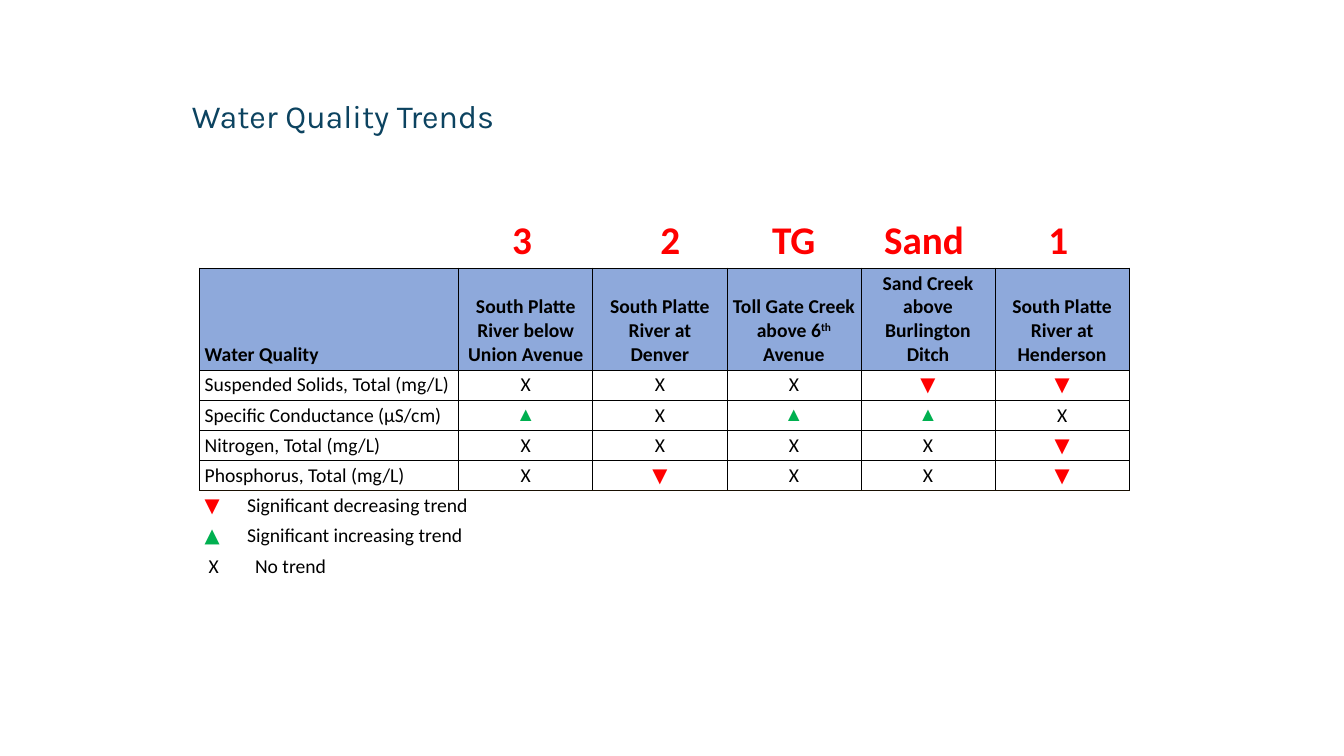
"""Build the Water Quality Trends slide: a trend table with site labels above it."""
from lxml import etree
from pptx import Presentation
from pptx.dml.color import RGBColor
from pptx.enum import text
from pptx.oxml import ns
from pptx.util import Inches, Pt

TITLE = "Water Quality Trends"
HEADERS = ["Water Quality", "South Platte River below Union Avenue",
           "South Platte River at Denver", "Toll Gate Creek above 6^th^ Avenue",
           "Sand Creek above Burlington Ditch", "South Platte River at Henderson"]
TRENDS = [("Suspended Solids, Total (mg/L)", "XXX▼▼"),
          ("Specific Conductance (µS/cm)", "▲X▲▲X"),
          ("Nitrogen, Total (mg/L)", "XXXX▼"),
          ("Phosphorus, Total (mg/L)", "X▼XX▼")]
LEGEND = [("▼", "Significant decreasing trend", 0),
          ("▲", "Significant increasing trend", 0),
          ("X", "No trend", 0.04)]
SITES = [("3", 4.98, 0.51), ("2", 6.45, 0.51), ("TG", 7.56, 1.33),
         ("Sand", 8.67, 1.33), ("1", 10.3, 0.51)]

BLACK, RED, GREEN = "000000", "FF0000", "00B050"
NAVY, HEADER_FILL, BASE_LINE = "0C4360", "8EA9DB", "191002"
MARK_COLORS = {"X": BLACK, "▼": RED, "▲": GREEN}
COL_WIDTHS = [2.57] + [1.33] * 5
HEADER_H, ROW_H = 1.01, 0.3
LEGEND_TAB = 0.42


def rgb(value):
    """Turn a hex string into a colour."""
    return RGBColor.from_string(value)


def write(p, words, size=14, font="Calibri", color=BLACK, bold=False, align=None):
    """Add words to a paragraph; parts between carets are superscript."""
    if align is not None:
        p.alignment = align
    for i, part in enumerate(words.split("^")):
        r = p.add_run()
        r.text = part
        r.font.size, r.font.name, r.font.bold = Pt(size), font, bold
        r.font.color.rgb = rgb(color)
        if i % 2:
            r._r.get_or_add_rPr().set("baseline", "30000")


def set_borders(cell, **sides):
    """Draw the L, R, T and B borders of a cell from (colour, width) pairs."""
    tcPr = cell._tc.get_or_add_tcPr()
    for side in "LRTB":
        color, width = sides.get(side, (None, 0))
        ln = etree.SubElement(tcPr, ns.qn(f"a:ln{side}"), w=str(Pt(width)))
        if color:
            fill = etree.SubElement(ln, ns.qn("a:solidFill"))
            etree.SubElement(fill, ns.qn("a:srgbClr"), val=color)
        else:
            etree.SubElement(ln, ns.qn("a:noFill"))


def format_cell(cell, anchor, fill=None, **sides):
    """Set the margins, anchor, borders and fill of a cell."""
    cell.margin_left = cell.margin_right = Inches(0.05)
    cell.margin_top = cell.margin_bottom = Inches(0.03)
    cell.vertical_anchor = anchor
    set_borders(cell, **sides)
    if fill:
        cell.fill.solid()
        cell.fill.fore_color.rgb = rgb(fill)
    else:
        cell.fill.background()


def add_title(s):
    """Place and fill the title."""
    sp = s.shapes.title
    sp.left, sp.top, sp.width, sp.height = map(Inches, (1.44, 0.95, 3.93, 1.08))
    tf = sp.text_frame
    tf.auto_size = text.MSO_AUTO_SIZE.NONE
    tf.vertical_anchor = text.MSO_ANCHOR.TOP
    p = tf.paragraphs[0]
    p.line_spacing = 0.9
    write(p, TITLE, size=23, font="Karla", color=NAVY, align=text.PP_ALIGN.CENTER)


def add_trend_table(s):
    """Add the table of trends with its legend rows."""
    grid = [HEADERS] + [[name, *marks] for name, marks in TRENDS]
    last_row, last_col = len(grid) - 1, len(HEADERS) - 1
    heights = [HEADER_H] + [ROW_H] * (last_row + len(LEGEND))
    table = s.shapes.add_table(len(heights), len(HEADERS), Inches(1.98), Inches(2.66),
                               Inches(sum(COL_WIDTHS)), Inches(sum(heights))).table
    table.first_row = table.horz_banding = False
    for col, width in zip(table.columns, COL_WIDTHS):
        col.width = Inches(width)
    for row, height in zip(table.rows, heights):
        row.height = Inches(height)

    thin, thick, base = (BLACK, 0.5), (BLACK, 1), (BASE_LINE, 1)
    for i, row in enumerate(grid):
        for j, words in enumerate(row):
            cell = table.cell(i, j)
            low = i == 0 or j == 0
            format_cell(cell, text.MSO_ANCHOR.BOTTOM if low else text.MSO_ANCHOR.MIDDLE,
                        fill=None if i else HEADER_FILL,
                        L=thin if j else thick,
                        R=thick if j == last_col and i != 0 else thin,
                        T=thin if i else thick,
                        B=base if i == last_row else thin)
            write(cell.text_frame.paragraphs[0], words, bold=i == 0,
                  font="Times New Roman" if words == "▲" else "Calibri",
                  color=MARK_COLORS.get(words, BLACK),
                  align=text.PP_ALIGN.CENTER if j else text.PP_ALIGN.LEFT)

    for i, (mark, meaning, indent) in enumerate(LEGEND, start=len(grid)):
        cell = table.cell(i, 0)
        cell.merge(table.cell(i, last_col))
        for j in range(len(HEADERS)):
            top = {} if i > len(grid) else {"T": base}
            format_cell(table.cell(i, j), text.MSO_ANCHOR.MIDDLE, **top)
        p = cell.text_frame.paragraphs[0]
        pPr = p._p.get_or_add_pPr()
        pPr.set("marL", str(Inches(indent)))
        tabs = etree.SubElement(pPr, ns.qn("a:tabLst"))
        etree.SubElement(tabs, ns.qn("a:tab"), pos=str(Inches(LEGEND_TAB + indent)), algn="l")
        write(p, mark, color=MARK_COLORS[mark])
        write(p, "\t" + meaning)


def add_site_labels(s):
    """Add the red site labels above the table."""
    for name, left, width in SITES:
        sp = s.shapes.add_textbox(Inches(left), Inches(2.09), Inches(width), Inches(0.57))
        tf = sp.text_frame
        tf.word_wrap = True
        write(tf.paragraphs[0], name, size=28, color=RED, bold=True)


def main():
    """Build and save the slide."""
    prs = Presentation()
    prs.slide_width, prs.slide_height = Inches(13.33), Inches(7.5)
    s = prs.slides.add_slide(prs.slide_layouts[5])
    add_title(s)
    add_trend_table(s)
    add_site_labels(s)
    prs.save("out.pptx")


if __name__ == "__main__":
    main()
